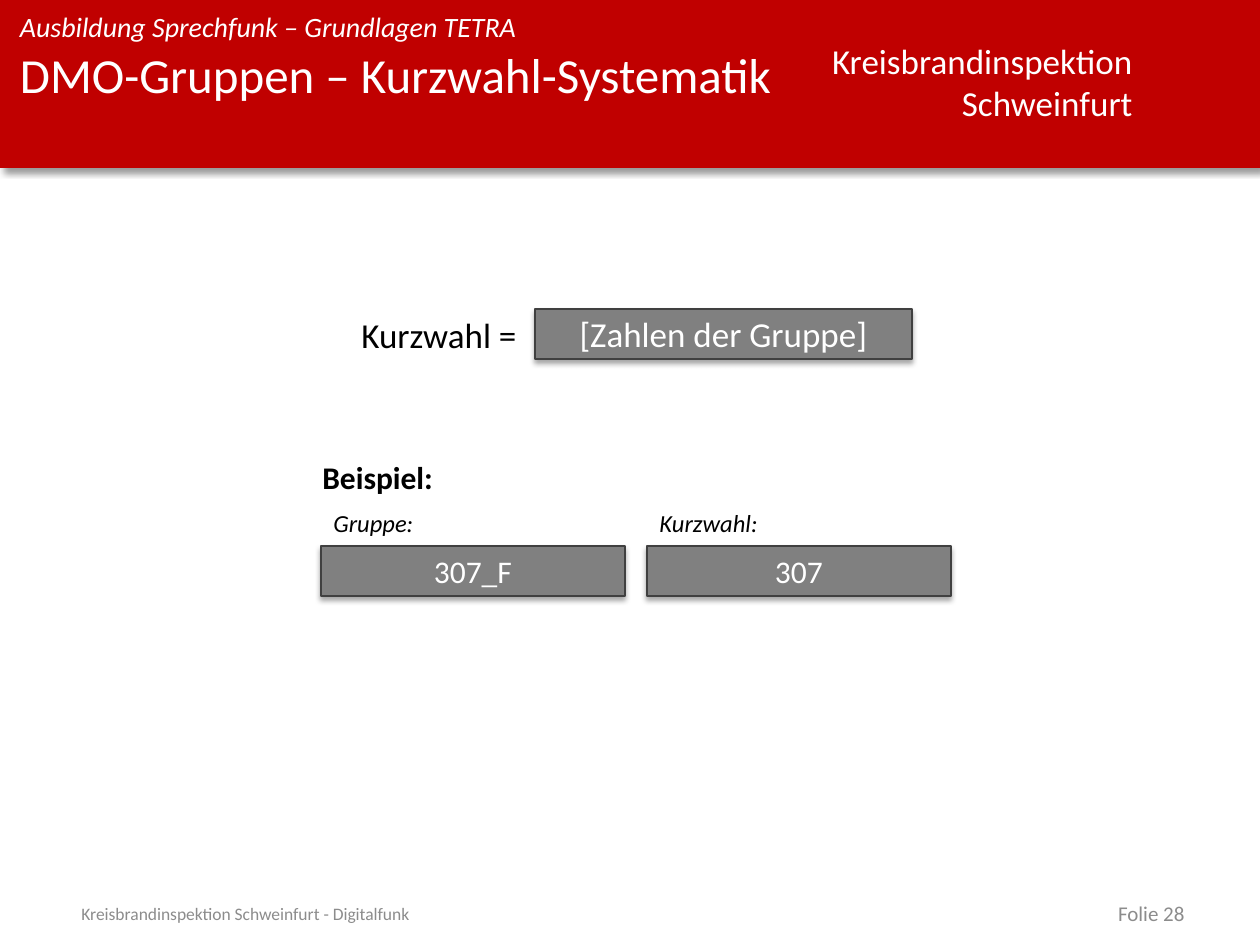
from lxml import etree
from pptx import Presentation
from pptx import util as u
from pptx.dml.color import RGBColor
from pptx.enum import shapes, text
from pptx.oxml import ns

PX = u.Inches(1) / 126
FONT = "Calibri"
RED = RGBColor(0xC0, 0x00, 0x00)
GRAY = RGBColor(0x80, 0x80, 0x80)
DARK_GRAY = RGBColor(0x40, 0x40, 0x40)
FOOTER_GRAY = RGBColor(0x8C, 0x8C, 0x8C)
WHITE = RGBColor(0xFF, 0xFF, 0xFF)
BLACK = RGBColor(0x00, 0x00, 0x00)

HEADER_SHADOW = {"alpha": 40, "blur": 4, "distance": 3, "angle": 45}
BOX_SHADOW = {"alpha": 35, "blur": 3.1, "distance": 1.8, "angle": 90}
NO_MARGINS = dict.fromkeys(
    ("margin_left", "margin_top", "margin_right", "margin_bottom"), 0)
TOP, MIDDLE = text.MSO_ANCHOR.TOP, text.MSO_ANCHOR.MIDDLE
LEFT, CENTER, RIGHT = text.PP_ALIGN.LEFT, text.PP_ALIGN.CENTER, text.PP_ALIGN.RIGHT


def emu(*lengths):
    return [u.Emu(round(length * PX)) for length in lengths]


def set_text(shape, lines, size, color, align=LEFT, bold=False, italic=False,
             **frame_format):
    frame = shape.text_frame
    frame_values = {"word_wrap": True, "vertical_anchor": TOP,
                    "auto_size": text.MSO_AUTO_SIZE.NONE} | frame_format
    for name, value in frame_values.items():
        setattr(frame, name, value)
    frame.text = lines
    font_values = {"name": FONT, "size": u.Pt(size), "bold": bold, "italic": italic}
    for paragraph in frame.paragraphs:
        paragraph.alignment = align
        for run in paragraph.runs:
            for name, value in font_values.items():
                setattr(run.font, name, value)
            run.font.color.rgb = color


def add_label(slide, box, lines, size, color=BLACK, **format_values):
    label = slide.shapes.add_textbox(*emu(*box))
    set_text(label, lines, size, color, **format_values)


def add_shadow(shape, alpha, blur, distance, angle):
    shape.shadow.inherit = False
    effects = shape.element.spPr.find(ns.qn("a:effectLst"))
    shadow = etree.SubElement(effects, ns.qn("a:outerShdw"), {
        "blurRad": str(u.Pt(blur)), "dist": str(u.Pt(distance)),
        "dir": str(angle * 60000), "algn": "tl", "rotWithShape": "0"})
    color = etree.SubElement(shadow, ns.qn("a:srgbClr"), val=str(BLACK))
    etree.SubElement(color, ns.qn("a:alpha"), val=str(alpha * 1000))


def add_rectangle(slide, box, fill, shadow):
    rectangle = slide.shapes.add_shape(shapes.MSO_SHAPE.RECTANGLE, *emu(*box))
    rectangle.fill.solid()
    rectangle.fill.fore_color.rgb = fill
    rectangle.line.fill.background()
    add_shadow(rectangle, **shadow)
    return rectangle


def add_value_box(slide, box, value, size):
    rectangle = add_rectangle(slide, box, GRAY, BOX_SHADOW)
    rectangle.line.color.rgb = DARK_GRAY
    rectangle.line.width = u.Pt(0.75)
    set_text(rectangle, value, size, WHITE, align=CENTER, vertical_anchor=MIDDLE)


def add_header(slide, left, top, width, height):
    band = add_rectangle(slide, (left, top, width, height), RED, HEADER_SHADOW)
    title = slide.shapes.title
    title.element.addprevious(band.element)
    add_label(slide, (left + 816, top + 33, 329, 97),
              "Kreisbrandinspektion\nSchweinfurt", 20, WHITE, align=RIGHT,
              word_wrap=False, auto_size=text.MSO_AUTO_SIZE.SHAPE_TO_FIT_TEXT)
    add_label(slide, (left + 20, top + 10, 796, 34),
              "Ausbildung Sprechfunk – Grundlagen TETRA", 16, WHITE,
              italic=True, **NO_MARGINS)
    title.left, title.top, title.width, title.height = emu(
        left + 20, top + 44, 796, height - 44)
    set_text(title, "DMO-Gruppen – Kurzwahl-Systematik", 28, WHITE, **NO_MARGINS)


def add_formula(slide, left, top, width, height):
    label_width = 186
    add_label(slide, (left, top - 2, label_width, height + 5), "Kurzwahl =", 20)
    add_value_box(slide, (left + label_width, top, width - label_width, height),
                  "[Zahlen der Gruppe]", 20)


def add_example(slide, left, top, width, height):
    gap, box_height = 22, 50
    column_width = (width - gap) // 2
    box_top = top + height - box_height
    add_label(slide, (left - 11, top, 137, 50), "Beispiel:", 18, bold=True,
              word_wrap=False)
    for column, (caption, value) in enumerate(
            [("Gruppe:", "307_F"), ("Kurzwahl:", "307")]):
        column_left = left + column * (column_width + gap)
        add_label(slide, (column_left, box_top - 44, 175, 43), caption, 14,
                  italic=True)
        add_value_box(slide, (column_left, box_top, column_width, box_height),
                      value, 18)


def add_footer(slide, left, top, width, height):
    number_width = 294
    add_label(slide, (left, top, 761, height),
              "Kreisbrandinspektion Schweinfurt - Digitalfunk", 10, FOOTER_GRAY,
              vertical_anchor=MIDDLE)
    add_label(slide, (left + width - number_width, top, number_width, height),
              "Folie 28", 12, FOOTER_GRAY, align=RIGHT, vertical_anchor=MIDDLE)


def main():
    presentation = Presentation()
    presentation.slide_width, presentation.slide_height = emu(1260, 945)
    slide = presentation.slides.add_slide(presentation.slide_layouts[5])
    add_header(slide, 0, 0, 1260, 168)
    add_footer(slide, 69, 901, 1128, 25)
    add_formula(slide, 349, 309, 563, 50)
    add_example(slide, 321, 452, 630, 144)
    presentation.save("out.pptx")


if __name__ == "__main__":
    main()
